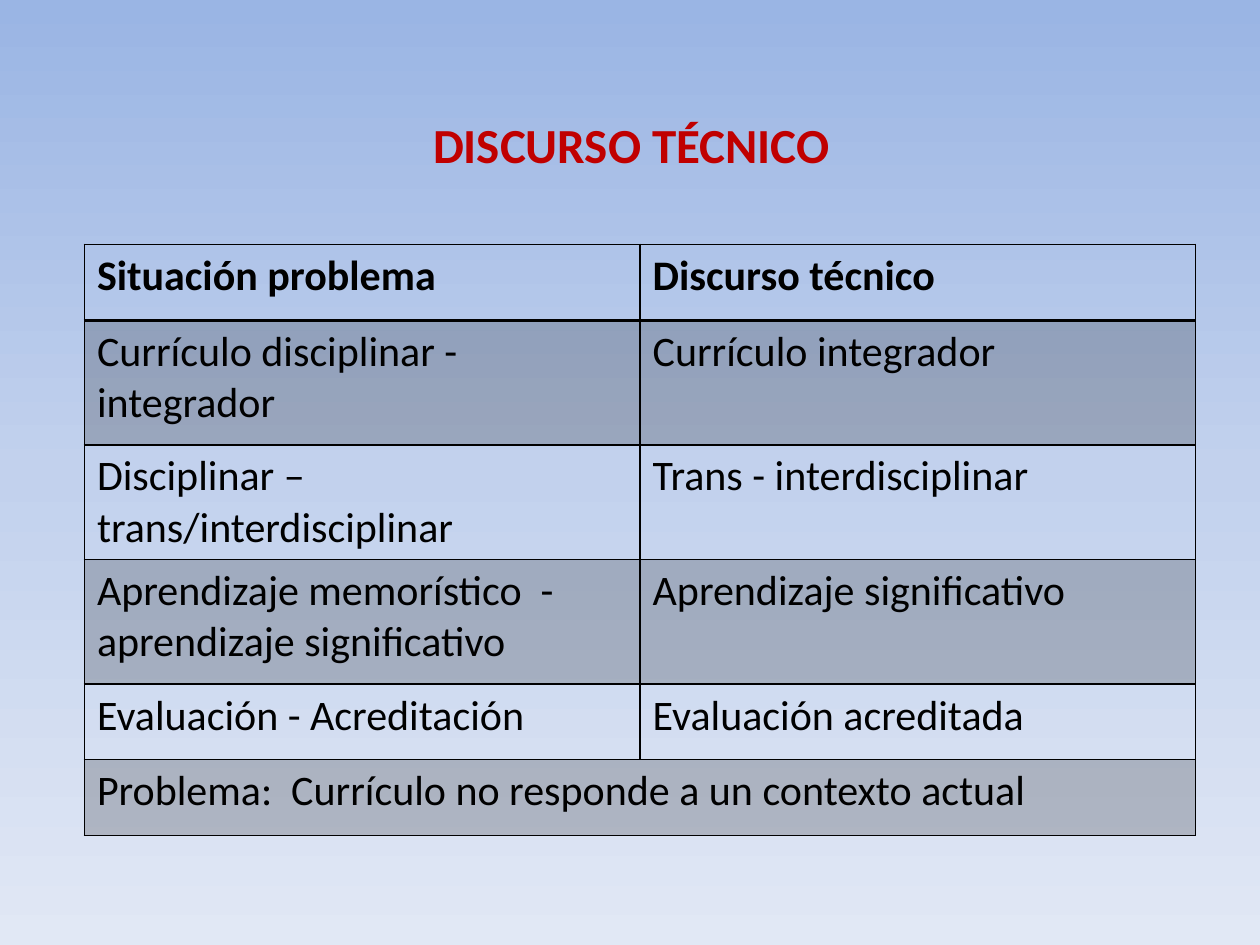
from copy import deepcopy

from lxml import etree
from pptx import Presentation
from pptx import util as u
from pptx.dml import color as c
from pptx.enum import text as t
from pptx.oxml import ns

COLORS = {
    "title": "C00000",
    "ink": "000000",
    "sky_top": "9AB5E4",
    "sky_middle": "C2D1ED",
    "sky_bottom": "E1E8F5",
}


def write(frame, words, size=24, color="ink", bold=False, align=t.PP_ALIGN.LEFT):
    frame.word_wrap = True
    para = frame.paragraphs[0]
    para.alignment = align
    span = para.add_run()
    span.text = words
    span.font.name = "Calibri"
    span.font.size = u.Pt(size)
    span.font.bold = bold
    span.font.color.rgb = c.RGBColor.from_string(COLORS[color])


def add_border(cell, side, width):
    props = cell._tc.get_or_add_tcPr()
    line = etree.SubElement(props, ns.qn(f"a:ln{side}"), w=str(u.Pt(width)))
    fill = etree.SubElement(line, ns.qn("a:solidFill"))
    etree.SubElement(fill, ns.qn("a:srgbClr"), val=COLORS["ink"])


deck = Presentation()
deck.slide_width, deck.slide_height = u.Inches(10), u.Inches(7.5)
page = deck.slides.add_slide(deck.slide_layouts[6])

# Background: three-stop gradient from top to bottom
sky = page.background.fill
sky.gradient()
sky.gradient_angle = 270
stop_list = page._element.find(".//" + ns.qn("a:gsLst"))
stop_list.append(deepcopy(stop_list[0]))
sky_stops = zip(sky.gradient_stops, ("sky_top", "sky_middle", "sky_bottom"), (0, 0.5, 1))
for stop, name, position in sky_stops:
    stop.color.rgb = c.RGBColor.from_string(COLORS[name])
    stop.position = position

# Title
box = page.shapes.add_textbox(u.Inches(0.51), u.Inches(0.52), u.Inches(9), u.Inches(1.25))
box.text_frame.vertical_anchor = t.MSO_ANCHOR.MIDDLE
write(box.text_frame, "DISCURSO TÉCNICO", size=28, color="title", bold=True,
      align=t.PP_ALIGN.CENTER)

# Table: row height and cell texts
rows = [
    (0.6, ["Situación problema", "Discurso técnico"]),
    (0.99, ["Currículo disciplinar - integrador", "Currículo integrador"]),
    (0.91, ["Disciplinar – trans/interdisciplinar", "Trans - interdisciplinar"]),
    (0.99, ["Aprendizaje memorístico  - aprendizaje significativo",
            "Aprendizaje significativo"]),
    (0.6, ["Evaluación - Acreditación", "Evaluación acreditada"]),
    (0.6, ["Problema:  Currículo no responde a un contexto actual"]),
]
table = page.shapes.add_table(len(rows), 2, u.Inches(0.67), u.Inches(1.94),
                              u.Inches(8.82), u.Inches(4.69)).table
table.first_row = table.horz_banding = False
for column in table.columns:
    column.width = u.Inches(4.41)

for i, (height, words) in enumerate(rows):
    table.rows[i].height = u.Inches(height)
    for j in range(2):
        cell = table.cell(i, j)
        # A heavier rule separates the header from the body
        for side in "LRTB":
            add_border(cell, side, 2 if (i, side) in ((0, "B"), (1, "T")) else 1)
        # Every second row is a translucent black band
        if i % 2:
            cell.fill.solid()
            cell.fill.fore_color.rgb = c.RGBColor.from_string(COLORS["ink"])
            tint = cell._tc.tcPr.find(ns.qn("a:solidFill"))[0]
            etree.SubElement(tint, ns.qn("a:alpha"), val="20000")
        else:
            cell.fill.background()
    for j, label in enumerate(words):
        write(table.cell(i, j).text_frame, label, bold=i == 0)

# The closing statement spans both columns
table.cell(5, 0).merge(table.cell(5, 1))

deck.save("out.pptx")
